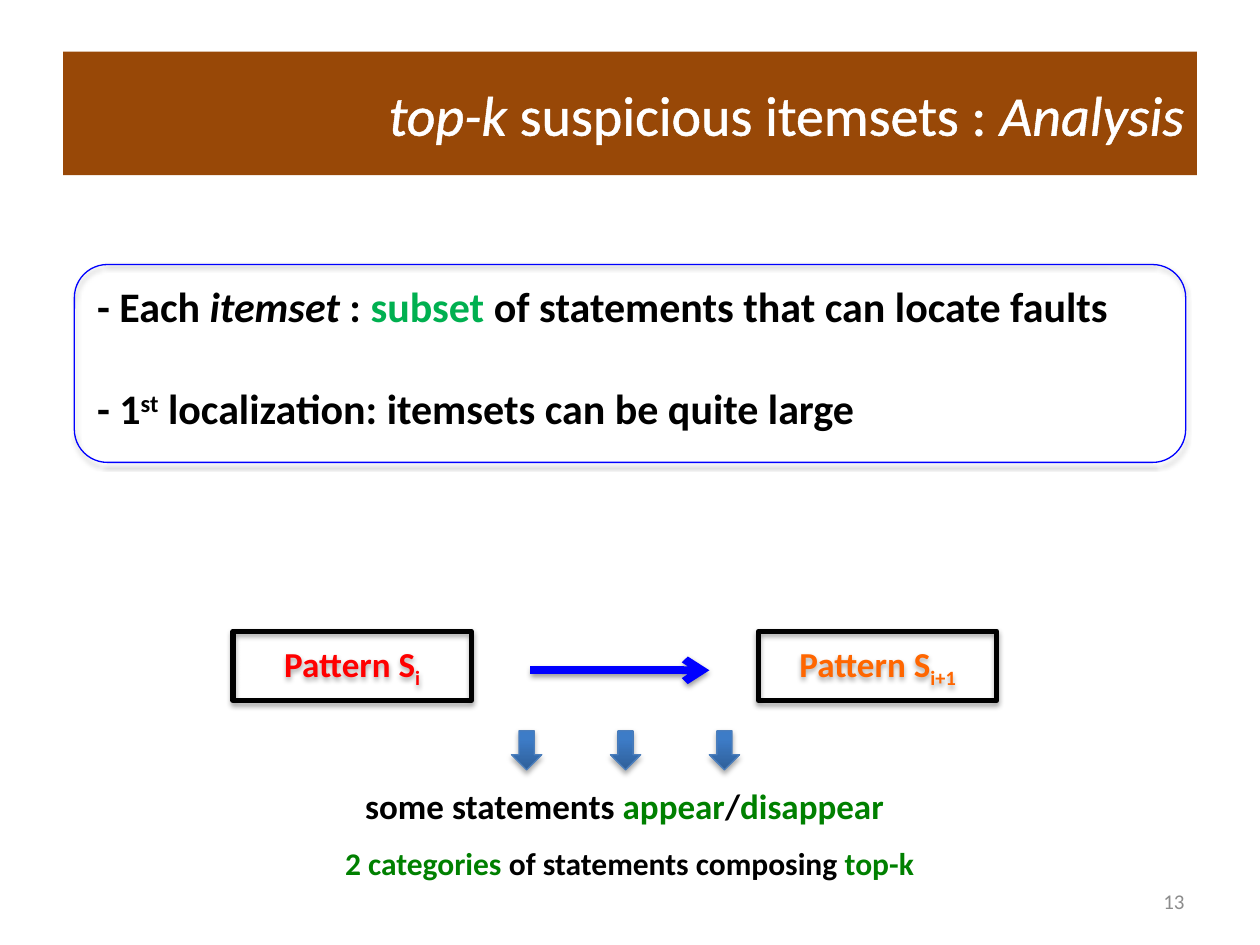
"""Build the slide on the analysis of top-k suspicious itemsets."""
from typing import NamedTuple

from lxml.etree import SubElement
from pptx import Presentation
from pptx.dml.color import RGBColor
from pptx.enum.shapes import MSO_CONNECTOR, MSO_SHAPE
from pptx.enum.text import MSO_ANCHOR, MSO_AUTO_SIZE, PP_ALIGN
from pptx.oxml.ns import qn
from pptx.util import Inches, Pt

BLACK, WHITE, BLUE, GREEN = "000000", "FFFFFF", "0000FF", "008000"


class Box(NamedTuple):
    left: float
    top: float
    width: float
    height: float


class Phrase(NamedTuple):
    text: str
    color: str = BLACK
    italic: bool = False
    baseline: int = 0


class Pattern(NamedTuple):
    left: float
    subscript: str
    color: str


class Caption(NamedTuple):
    box: Box
    size: int
    phrases: list[Phrase]


FINDINGS = [
    [Phrase("- Each "), Phrase("itemset ", italic=True), Phrase(": "), Phrase("subset", "00B050"),
     Phrase(" of statements that can locate faults")],
    [Phrase("- 1"), Phrase("st", baseline=30),
     Phrase(" localization: itemsets can be quite large")],
]
PATTERNS = [Pattern(1.85, "i", "FF0000"), Pattern(6.02, "i+1", "FF6600")]
CAPTIONS = [
    Caption(Box(2.8, 6.18, 4.37, 0.44), 20,
            [Phrase("some statements "), Phrase("appear", GREEN), Phrase("/"),
             Phrase("disappear", GREEN)]),
    Caption(Box(2.64, 6.65, 4.79, 0.4), 18,
            [Phrase("2 categories ", GREEN), Phrase("of statements composing "),
             Phrase("top-k", GREEN)]),
]


def rgb(color: str) -> RGBColor:
    return RGBColor.from_string(color)


def place(shape, box: Box) -> None:
    shape.left, shape.top, shape.width, shape.height = map(Inches, box)


def write(paragraph, phrases: list[Phrase], size: int, bold: bool = True) -> None:
    for phrase in phrases:
        run = paragraph.add_run()
        run.text = phrase.text
        font = run.font
        font.name, font.size, font.bold, font.italic = "Calibri", Pt(size), bold, phrase.italic
        font.color.rgb = rgb(phrase.color)
        if phrase.baseline:
            run._r.get_or_add_rPr().set("baseline", str(phrase.baseline * 1000))


def add_shadow(shape, opacity: int = 35, distance: float = 1.8) -> None:
    effects = SubElement(shape._element.spPr, qn("a:effectLst"))
    outer = SubElement(effects, qn("a:outerShdw"), blurRad=str(Pt(3.1)), dist=str(Pt(distance)),
                       dir="5400000", rotWithShape="0")
    tint = SubElement(outer, qn("a:srgbClr"), val=BLACK)
    SubElement(tint, qn("a:alpha"), val=str(opacity * 1000))


def add_outlined(slide, preset: MSO_SHAPE, box: Box, color: str, weight: float):
    shape = slide.shapes.add_shape(preset, *map(Inches, box))
    shape.fill.background()
    shape.line.color.rgb = rgb(color)
    shape.line.width = Pt(weight)
    add_shadow(shape)
    return shape


def add_text(slide, box: Box, phrases: list[Phrase], size: int, bold: bool = True):
    frame = slide.shapes.add_textbox(*map(Inches, box)).text_frame
    frame.word_wrap = False
    write(frame.paragraphs[0], phrases, size, bold)
    return frame


def fill_title(title) -> None:
    place(title, Box(0.5, 0.41, 9, 0.98))
    title.fill.solid()
    title.fill.fore_color.rgb = rgb("984807")
    frame = title.text_frame
    frame.vertical_anchor = MSO_ANCHOR.MIDDLE
    heading = frame.paragraphs[0]
    heading.alignment = PP_ALIGN.RIGHT
    write(heading, [Phrase("top-k ", WHITE, True), Phrase("suspicious itemsets : ", WHITE),
                    Phrase("Analysis", WHITE, True)], 32, False)
    for run in heading.runs:
        properties = run._r.get_or_add_rPr()
        outline = SubElement(properties, qn("a:ln"), w=str(Pt(1.45)))
        SubElement(SubElement(outline, qn("a:solidFill")), qn("a:srgbClr"), val=WHITE)
        properties.insert(0, outline)


def fill_findings(body) -> None:
    place(body, Box(0.67, 2.18, 8.35, 1.31))
    frame = body.text_frame
    frame.auto_size = MSO_AUTO_SIZE.NONE
    frame.word_wrap = False
    for index, phrases in enumerate(FINDINGS):
        finding = frame.add_paragraph() if index else frame.paragraphs[0]
        finding.space_before = Pt(29.3 * index)
        properties = finding._p.get_or_add_pPr()
        properties.set("marL", "0")
        properties.set("indent", "0")
        SubElement(properties, qn("a:buNone"))
        write(finding, phrases, 24)


def add_pattern(slide, pattern: Pattern) -> None:
    box = Box(pattern.left, 5.01, 1.89, 0.55)
    frame = add_outlined(slide, MSO_SHAPE.RECTANGLE, box, BLACK, 3).text_frame
    frame.vertical_anchor = MSO_ANCHOR.MIDDLE
    label = frame.paragraphs[0]
    label.alignment = PP_ALIGN.CENTER
    write(label, [Phrase("Pattern S", pattern.color),
                  Phrase(pattern.subscript, pattern.color, baseline=-25)], 20)


def add_transition(slide) -> None:
    arrow = slide.shapes.add_connector(MSO_CONNECTOR.STRAIGHT, Inches(4.21), Inches(5.32),
                                       Inches(5.63), Inches(5.32))
    arrow.line.color.rgb = rgb(BLUE)
    arrow.line.width = Pt(4.5)
    SubElement(arrow.line._get_or_add_ln(), qn("a:tailEnd"), type="arrow")
    add_shadow(arrow, 38, 1.6)


def add_down_arrow(slide, left: float) -> None:
    arrow = add_outlined(slide, MSO_SHAPE.DOWN_ARROW, Box(left, 5.8, 0.24, 0.31), "4B7EBC", 0.75)
    arrow.fill.gradient()
    arrow.fill.gradient_angle = 90
    for stop, (position, color) in zip(arrow.fill.gradient_stops, [(0, "2F5F99"), (0.8, "3D7CC7")]):
        stop.position = position
        stop.color.rgb = rgb(color)


def main() -> None:
    deck = Presentation()
    deck.slide_width, deck.slide_height = Inches(10), Inches(7.5)
    slide = deck.slides.add_slide(deck.slide_layouts[1])
    fill_title(slide.shapes.title)
    fill_findings(slide.placeholders[1])
    add_outlined(slide, MSO_SHAPE.ROUNDED_RECTANGLE, Box(0.59, 2.1, 8.82, 1.57), BLUE, 0.75)
    number = add_text(slide, Box(7.17, 6.95, 2.33, 0.4), [Phrase("13", "8C8C8C")], 12, False)
    number.word_wrap = True
    number.vertical_anchor = MSO_ANCHOR.MIDDLE
    number.paragraphs[0].alignment = PP_ALIGN.RIGHT
    for pattern in PATTERNS:
        add_pattern(slide, pattern)
    add_transition(slide)
    for caption in CAPTIONS:
        add_text(slide, caption.box, caption.phrases, caption.size)
    for column in range(3):
        add_down_arrow(slide, 4.06 + 0.785 * column)
    deck.save("out.pptx")


if __name__ == "__main__":
    main()
